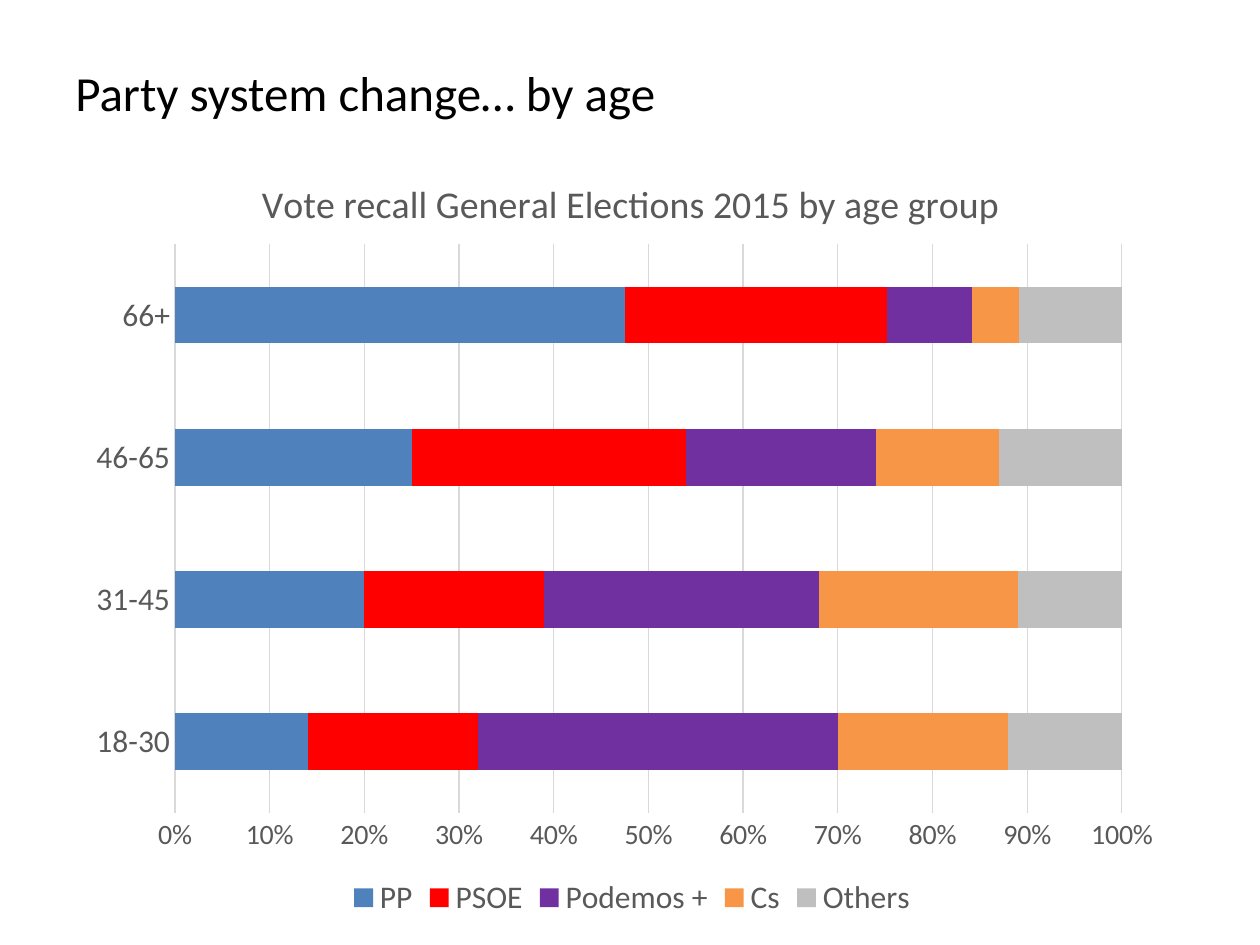
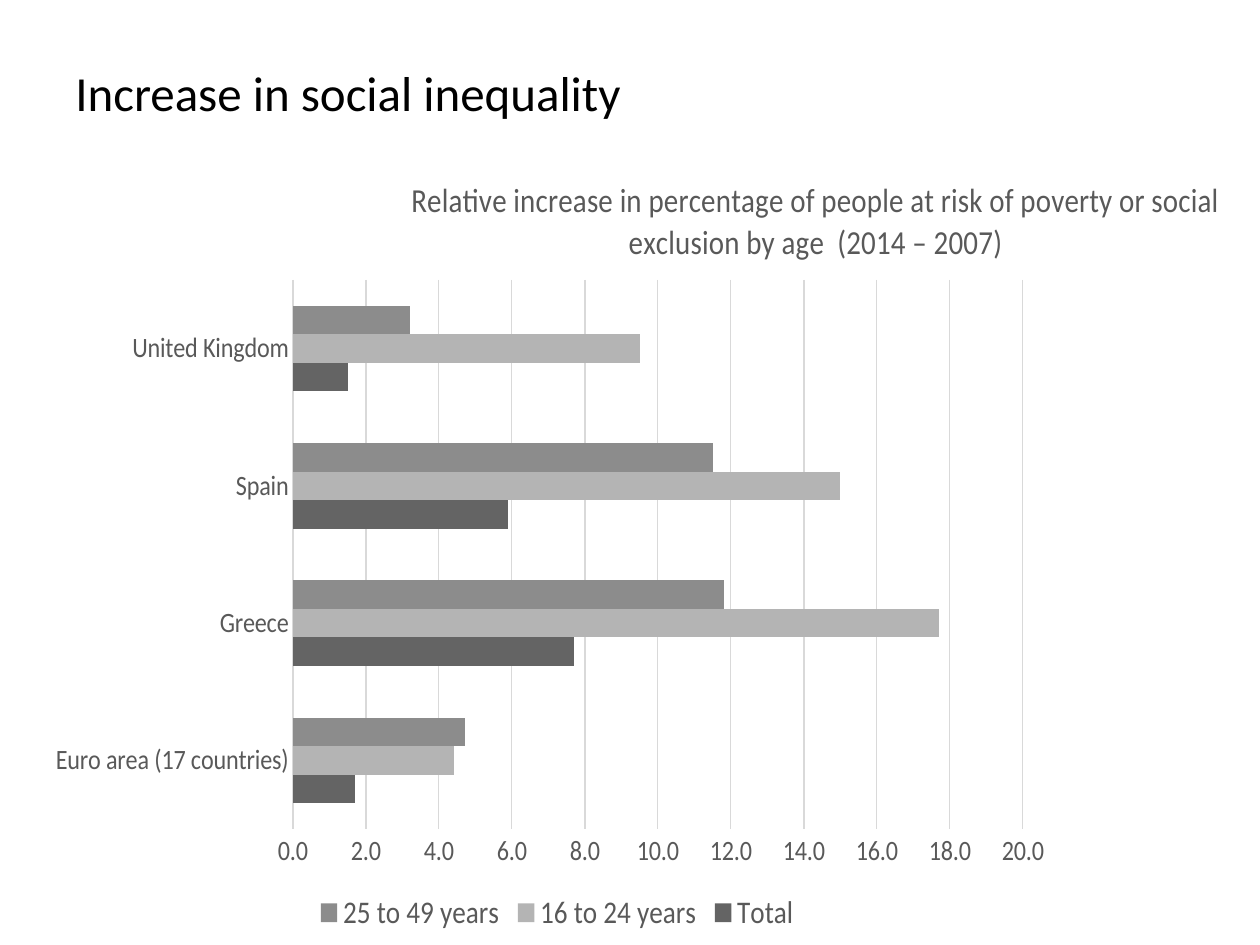
from dataclasses import dataclass

from lxml import etree
from pptx import Presentation
from pptx.chart.data import CategoryChartData
from pptx.dml.color import RGBColor
from pptx.enum.chart import XL_CHART_TYPE, XL_LEGEND_POSITION, XL_TICK_MARK
from pptx.enum.text import MSO_ANCHOR
from pptx.oxml.ns import qn
from pptx.util import Pt

STACKED = XL_CHART_TYPE.BAR_STACKED_100
CLUSTERED = XL_CHART_TYPE.BAR_CLUSTERED
LEGEND_BOTTOM = XL_LEGEND_POSITION.BOTTOM
NO_TICK = XL_TICK_MARK.NONE
MIDDLE = MSO_ANCHOR.MIDDLE

EMU_PER_PX = 914400 / 126
SLIDE_SIZE = (1260, 945)
TITLE_BOX = (63, 38, 1134, 107)
BLANK_LAYOUT = 6


@dataclass(frozen=True)
class Theme:
    font: str = "Calibri"
    title_color: str = "000000"
    chart_text: str = "595959"
    grid: str = "D9D9D9"
    title_size: float = 28
    legend_size: float = 18
    value_size: float = 16
    line_width: float = 0.75


THEME = Theme()

SLIDES = [
    {
        "title": "Party system change… by age",
        "chart_title": "Vote recall General Elections 2015 by age group",
        "type": STACKED,
        "frame": (74, 135, 1101, 794),
        "title_at": (181, 35),
        "plot_at": (101, 109, 947, 569),
        "legend_at": (263, 748, 590, 42),
        "chart_title_size": 21.6,
        "category_size": 18,
        "gap": 150,
        "overlap": 100,
        "scale": (0, 1, 0.1),
        "format": "0%",
        "categories": ["18-30", "31-45", "46-65", "66+"],
        "series": [
            ("PP", (14, 20, 25, 48), "4F81BD"),
            ("PSOE", (18, 19, 29, 28), "FF0000"),
            ("Podemos +", (38, 29, 20, 9), "7030A0"),
            ("Cs", (18, 21, 13, 5), "F79646"),
            ("Others", (12, 11, 13, 11), "BFBFBF"),
        ],
    },
    {
        "title": "Increase in social inequality",
        "chart_title": "Relative increase in percentage of people at risk of poverty "
                       "or social exclusion by age  (2014 – 2007)",
        "type": CLUSTERED,
        "frame": (35, 145, 1191, 800),
        "title_at": (430, 25),
        "plot_at": (299, 135, 846, 549),
        "legend_at": (320, 756, 570, 40),
        "chart_title_size": 19.2,
        "category_size": 16,
        "gap": 182,
        "overlap": 0,
        "scale": (0, 20, 2),
        "format": "#,##0.0",
        "categories": ["Euro area (17 countries)", "Greece", "Spain", "United Kingdom"],
        "series": [
            ("Total", (1.7, 7.7, 5.9, 1.5), "646464"),
            ("16 to 24 years", (4.4, 17.7, 15, 9.5), "B4B4B4"),
            ("25 to 49 years", (4.7, 11.8, 11.5, 3.2), "8C8C8C"),
        ],
    },
]


def emu(*lengths):
    return [round(length * EMU_PER_PX) for length in lengths]


def style_font(font, size, color=THEME.chart_text):
    font.name = THEME.font
    font.size = Pt(size)
    font.bold = False
    font.color.rgb = RGBColor.from_string(color)


def style_line(line):
    line.color.rgb = RGBColor.from_string(THEME.grid)
    line.width = Pt(THEME.line_width)


def place(parent, box, frame, after=None, inner=False):
    for old_layout in parent.findall(qn("c:layout")):
        parent.remove(old_layout)
    layout = etree.Element(qn("c:layout"))
    manual = etree.SubElement(layout, qn("c:manualLayout"))
    settings = [("layoutTarget", "inner")] if inner else []
    settings += [("xMode", "edge"), ("yMode", "edge")]
    extents = (frame[2], frame[3]) * 2
    settings += [(name, f"{length / extent:.4f}")
                 for name, length, extent in zip("xywh", box, extents)]
    for name, value in settings:
        etree.SubElement(manual, qn(f"c:{name}")).set("val", value)
    if after:
        parent.find(qn(after)).addnext(layout)
    else:
        parent.insert(0, layout)


def add_title(slide, text):
    text_frame = slide.shapes.add_textbox(*emu(*TITLE_BOX)).text_frame
    text_frame.word_wrap = True
    text_frame.vertical_anchor = MIDDLE
    paragraph = text_frame.paragraphs[0]
    paragraph.text = text
    style_font(paragraph.font, THEME.title_size, THEME.title_color)


def style_axes(chart, content):
    category_axis, value_axis = chart.category_axis, chart.value_axis
    for axis, size in ((category_axis, content["category_size"]),
                       (value_axis, THEME.value_size)):
        axis.major_tick_mark = axis.minor_tick_mark = NO_TICK
        style_font(axis.tick_labels.font, size)
    category_axis.has_major_gridlines = False
    style_line(category_axis.format.line)
    value_axis.format.line.fill.background()
    value_axis.has_major_gridlines = True
    style_line(value_axis.major_gridlines.format.line)
    value_axis.minimum_scale, value_axis.maximum_scale, value_axis.major_unit = content["scale"]
    value_axis.tick_labels.number_format = content["format"]
    value_axis.tick_labels.number_format_is_linked = False


def add_bar_chart(slide, content):
    frame = content["frame"]
    data = CategoryChartData()
    data.categories = content["categories"]
    for name, values, color in content["series"]:
        data.add_series(name, values)
    chart = slide.shapes.add_chart(content["type"], *emu(*frame), data).chart
    style_font(chart.font, THEME.value_size)

    chart.has_title = True
    chart_title = chart.chart_title
    paragraph = chart_title.text_frame.paragraphs[0]
    paragraph.text = content["chart_title"]
    style_font(paragraph.font, content["chart_title_size"])
    chart_title.include_in_layout = False

    chart.has_legend = True
    legend = chart.legend
    legend.position = LEGEND_BOTTOM
    legend.include_in_layout = False
    style_font(legend.font, THEME.legend_size)

    plot = chart.plots[0]
    plot.vary_by_categories = False
    plot.gap_width = content["gap"]
    plot.overlap = content["overlap"]
    for series, (name, values, color) in zip(plot.series, content["series"]):
        series.format.fill.solid()
        series.format.fill.fore_color.rgb = RGBColor.from_string(color)
    style_axes(chart, content)

    chart_root = chart.element.find(qn("c:chart"))
    place(chart_root.find(qn("c:title")), content["title_at"], frame, after="c:tx")
    place(chart_root.find(qn("c:plotArea")), content["plot_at"], frame, inner=True)
    place(chart_root.find(qn("c:legend")), content["legend_at"], frame, after="c:legendPos")


def main():
    presentation = Presentation()
    presentation.slide_width, presentation.slide_height = emu(*SLIDE_SIZE)
    for content in SLIDES:
        slide = presentation.slides.add_slide(presentation.slide_layouts[BLANK_LAYOUT])
        add_title(slide, content["title"])
        add_bar_chart(slide, content)
    presentation.save("out.pptx")


if __name__ == "__main__":
    main()
